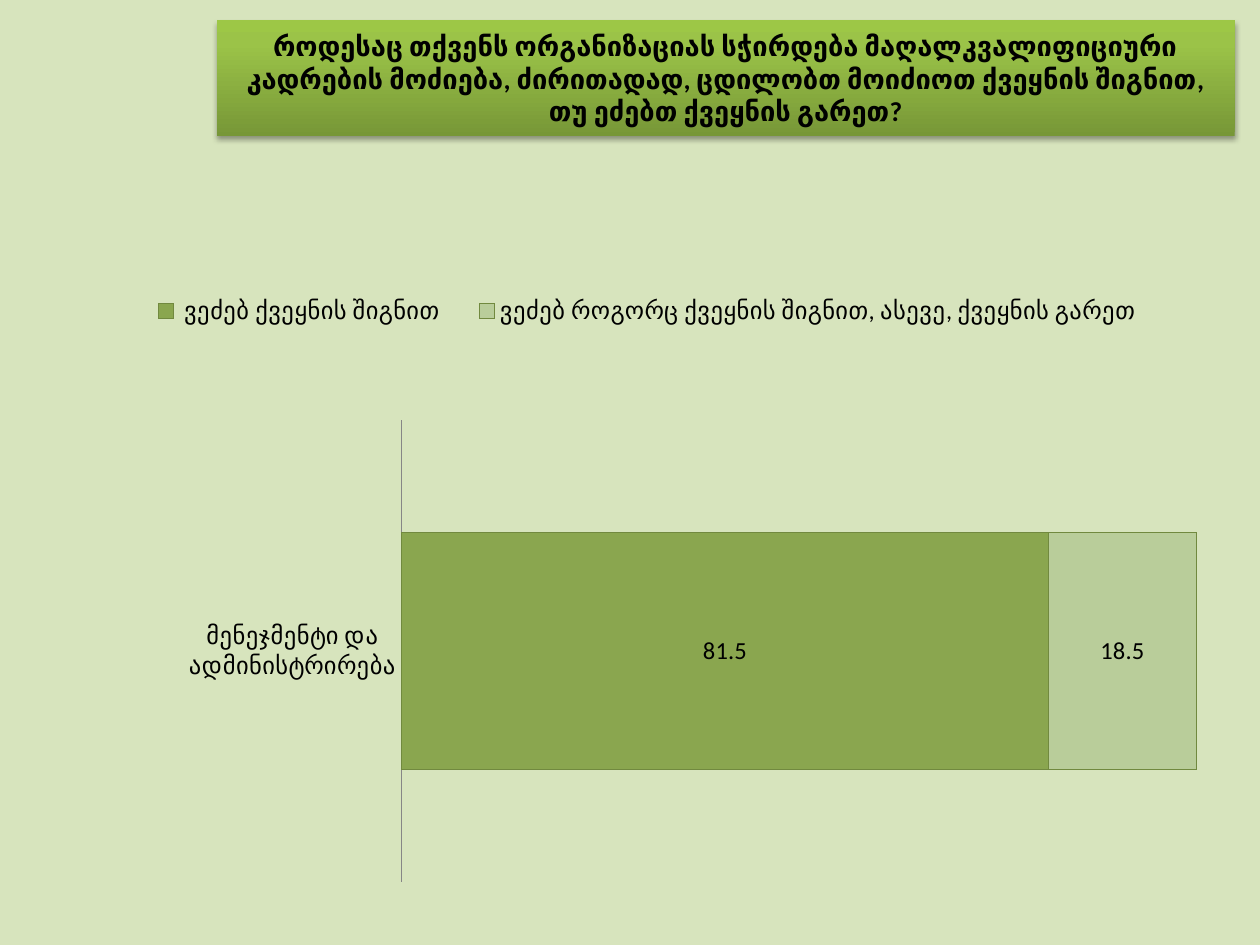
from lxml.etree import SubElement
from pptx import Presentation
from pptx.chart.data import CategoryChartData
from pptx.dml.color import RGBColor
from pptx.enum.chart import XL_CHART_TYPE, XL_LABEL_POSITION, XL_LEGEND_POSITION, XL_TICK_MARK
from pptx.enum.shapes import MSO_SHAPE
from pptx.enum.text import MSO_ANCHOR, PP_ALIGN
from pptx.oxml import parse_xml
from pptx.oxml.ns import nsdecls, qn
from pptx.util import Cm, Pt

COLORS = {
    "background": "D7E4BD",
    "text": "000000",
    "inside": "8AA64F",
    "both": "B9CD9A",
    "outline": "71893F",
    "axis": "868686",
}
BANNER_STOPS = [(0, "779737"), (80, "9BC348"), (100, "9DC746")]


def rgb(name):
    return RGBColor.from_string(COLORS[name])


class SlideBuilder:
    font_name = "Calibri"

    def __init__(self, prs):
        self.s = prs.slides.add_slide(prs.slide_layouts[6])
        fill = self.s.background.fill
        fill.solid()
        fill.fore_color.rgb = rgb("background")

    def style_font(self, font, size, bold=False):
        font.name = self.font_name
        font.size = Pt(size)
        font.bold = bold
        font.color.rgb = rgb("text")

    def banner(self, text, left, top, width, height):
        sp = self.s.shapes.add_shape(MSO_SHAPE.RECTANGLE, Cm(left), Cm(top), Cm(width), Cm(height))
        sp.line.fill.background()
        sp.shadow.inherit = False
        sp.fill.gradient()
        sp.fill.gradient_angle = 90
        stops = sp.element.spPr.find(".//" + qn("a:gsLst"))
        for stop in list(stops):
            stops.remove(stop)
        for pos, color in BANNER_STOPS:
            stop = SubElement(stops, qn("a:gs"), pos=str(pos * 1000))
            SubElement(stop, qn("a:srgbClr"), val=color)
        shadow = SubElement(
            sp.element.spPr.find(qn("a:effectLst")), qn("a:outerShdw"),
            blurRad=str(Pt(3.1)), dist=str(Pt(1.8)), dir="5400000", rotWithShape="0",
        )
        color = SubElement(shadow, qn("a:srgbClr"), val=COLORS["text"])
        SubElement(color, qn("a:alpha"), val="35000")
        tf = sp.text_frame
        tf.word_wrap = True
        tf.vertical_anchor = MSO_ANCHOR.MIDDLE
        p = tf.paragraphs[0]
        p.text = text
        p.alignment = PP_ALIGN.CENTER
        self.style_font(p.font, 15.6, bold=True)

    def layout(self, x, y, w, h, inner=False):
        target = '<c:layoutTarget val="inner"/>' if inner else ""
        return parse_xml(
            f'<c:layout {nsdecls("c")}><c:manualLayout>{target}'
            '<c:xMode val="edge"/><c:yMode val="edge"/>'
            f'<c:x val="{x}"/><c:y val="{y}"/><c:w val="{w}"/><c:h val="{h}"/>'
            '</c:manualLayout></c:layout>'
        )

    def place(self, element, index, layout):
        for old in element.findall(qn("c:layout")):
            element.remove(old)
        element.insert(index, layout)

    def stacked_bar(self, category, series, left, top, width, height):
        data = CategoryChartData()
        data.categories = [category]
        for name, value, _ in series:
            data.add_series(name, [value])
        chart = self.s.shapes.add_chart(
            XL_CHART_TYPE.BAR_STACKED_100, Cm(left), Cm(top), Cm(width), Cm(height), data
        ).chart
        self.style_font(chart.font, 14)
        chart.has_title = False
        chart.has_legend = True
        chart.legend.position = XL_LEGEND_POSITION.TOP
        chart.legend.include_in_layout = False
        chart.value_axis.visible = False
        chart.value_axis.has_major_gridlines = False
        axis = chart.category_axis
        axis.major_tick_mark = XL_TICK_MARK.NONE
        axis.format.line.color.rgb = rgb("axis")
        plot = chart.plots[0]
        plot.gap_width = 95
        plot.overlap = 100
        plot.vary_by_categories = False
        for ser, (_, _, color) in zip(plot.series, series):
            ser.format.fill.solid()
            ser.format.fill.fore_color.rgb = rgb(color)
            ser.format.line.color.rgb = rgb("outline")
            labels = ser.data_labels
            labels.show_value = True
            labels.position = XL_LABEL_POSITION.CENTER
            self.style_font(labels.font, 14)
        self.place(chart.element.find(".//" + qn("c:plotArea")), 0,
                   self.layout(0.305, 0.308, 0.679, 0.666, inner=True))
        self.place(chart.element.find(".//" + qn("c:legend")), 1,
                   self.layout(0.07, 0.1, 0.89, 0.1))


def main():
    prs = Presentation()
    prs.slide_width, prs.slide_height = Cm(25.4), Cm(19.05)
    slide = SlideBuilder(prs)
    slide.banner(
        "როდესაც თქვენს ორგანიზაციას სჭირდება მაღალკვალიფიციური კადრების მოძიება, "
        "ძირითადად, ცდილობთ მოიძიოთ ქვეყნის შიგნით, თუ ეძებთ ქვეყნის გარეთ?",
        4.37, 0.41, 20.52, 2.34,
    )
    slide.stacked_bar(
        "მენეჯმენტი და ადმინისტრირება",
        [
            (" ვეძებ ქვეყნის შიგნით", 81.5, "inside"),
            ("ვეძებ როგორც ქვეყნის შიგნით, ასევე, ქვეყნის გარეთ", 18.5, "both"),
        ],
        0.89, 4.17, 23.6, 13.97,
    )
    prs.save("out.pptx")


if __name__ == "__main__":
    main()
